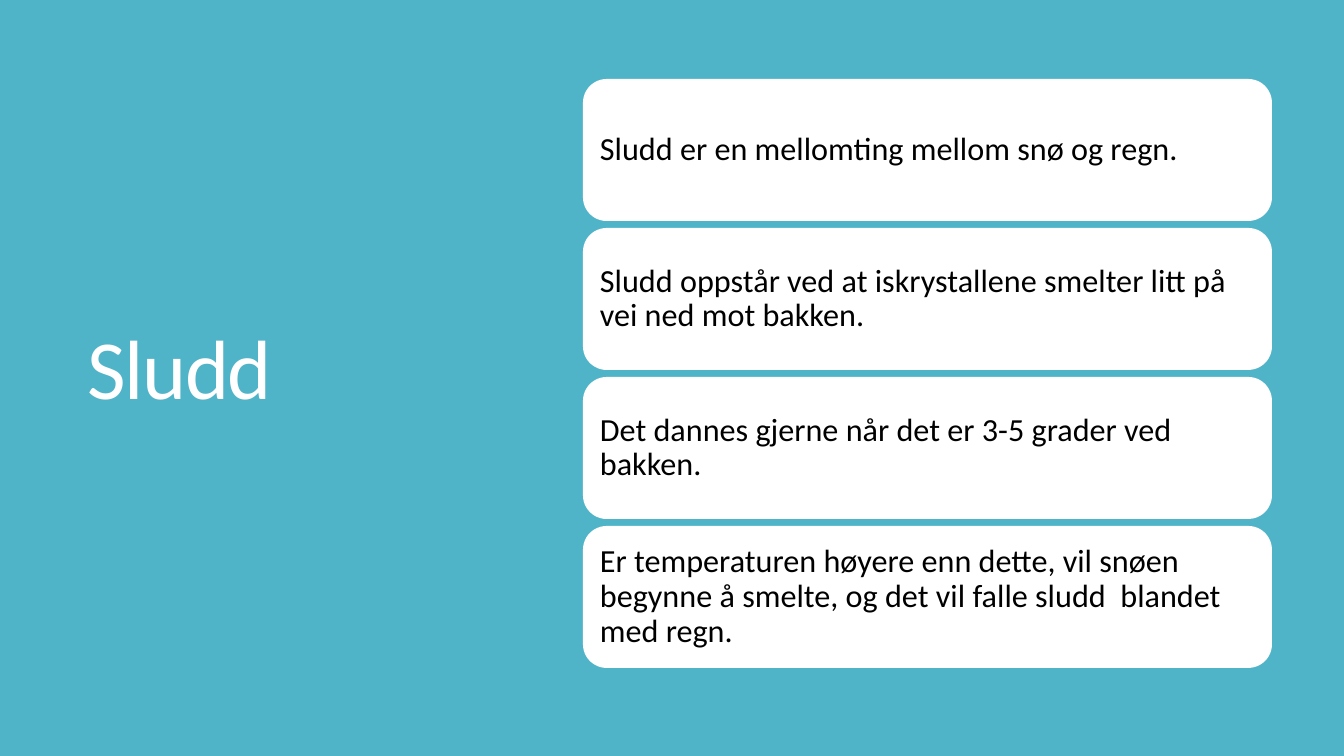
"""Builds the slide "Sludd": a title beside four stacked statement cards."""
from pptx import Presentation
from pptx.dml.color import RGBColor
from pptx.enum.shapes import MSO_SHAPE as Shape
from pptx.enum.text import MSO_ANCHOR as Anchor, MSO_AUTO_SIZE as AutoSize, PP_ALIGN as Align
from pptx.util import Pt

PX = 914400 / 100.8
STATEMENTS = [
    "Sludd er en mellomting mellom snø og regn.",
    "Sludd oppstår ved at iskrystallene smelter litt på vei ned mot bakken.",
    "Det dannes gjerne når det er 3-5 grader ved bakken.",
    "Er temperaturen høyere enn dette, vil snøen begynne å smelte, "
    "og det vil falle sludd  blandet med regn.",
]
CARD_LEFT, CARD_TOP, CARD_WIDTH, CARD_HEIGHT, CARD_STEP = 583, 79, 689, 142, 149


def px(*lengths):
    return [round(length * PX) for length in lengths]


def write(shape, text, size, color, spacing, inset):
    frame = shape.text_frame
    frame.text = text
    side, edge = px(*inset)
    layout = {
        "word_wrap": True, "auto_size": AutoSize.NONE, "vertical_anchor": Anchor.MIDDLE,
        "margin_left": side, "margin_right": side, "margin_top": edge, "margin_bottom": edge,
    }
    for key, value in layout.items():
        setattr(frame, key, value)
    paragraph = frame.paragraphs[0]
    paragraph.alignment = Align.LEFT
    paragraph.line_spacing = spacing
    font = paragraph.runs[0].font
    font.name, font.size = "Calibri", Pt(size)
    font.color.rgb = RGBColor.from_string(color)
    return paragraph.runs[0]


prs = Presentation()
prs.slide_width, prs.slide_height = px(1344, 756)
slide = prs.slides.add_slide(prs.slide_layouts[5])
backdrop = slide.background.fill
backdrop.solid()
backdrop.fore_color.rgb = RGBColor.from_string("50B4C8")

title = slide.shapes.title
title.left, title.top, title.width, title.height = px(78, 71, 440, 606)
heading = write(title, "Sludd", 60, "FFFFFF", 0.85, (10, 5))
heading.font._element.set("spc", "-120")

for row, statement in enumerate(STATEMENTS):
    card = slide.shapes.add_shape(
        Shape.ROUNDED_RECTANGLE,
        *px(CARD_LEFT, CARD_TOP + row * CARD_STEP, CARD_WIDTH, CARD_HEIGHT))
    card.shadow.inherit = False
    card.fill.solid()
    card.fill.fore_color.rgb = RGBColor.from_string("FFFFFF")
    card.line.fill.background()
    write(card, statement, 23, "000000", 0.9, (10, 10))

prs.save("out.pptx")
